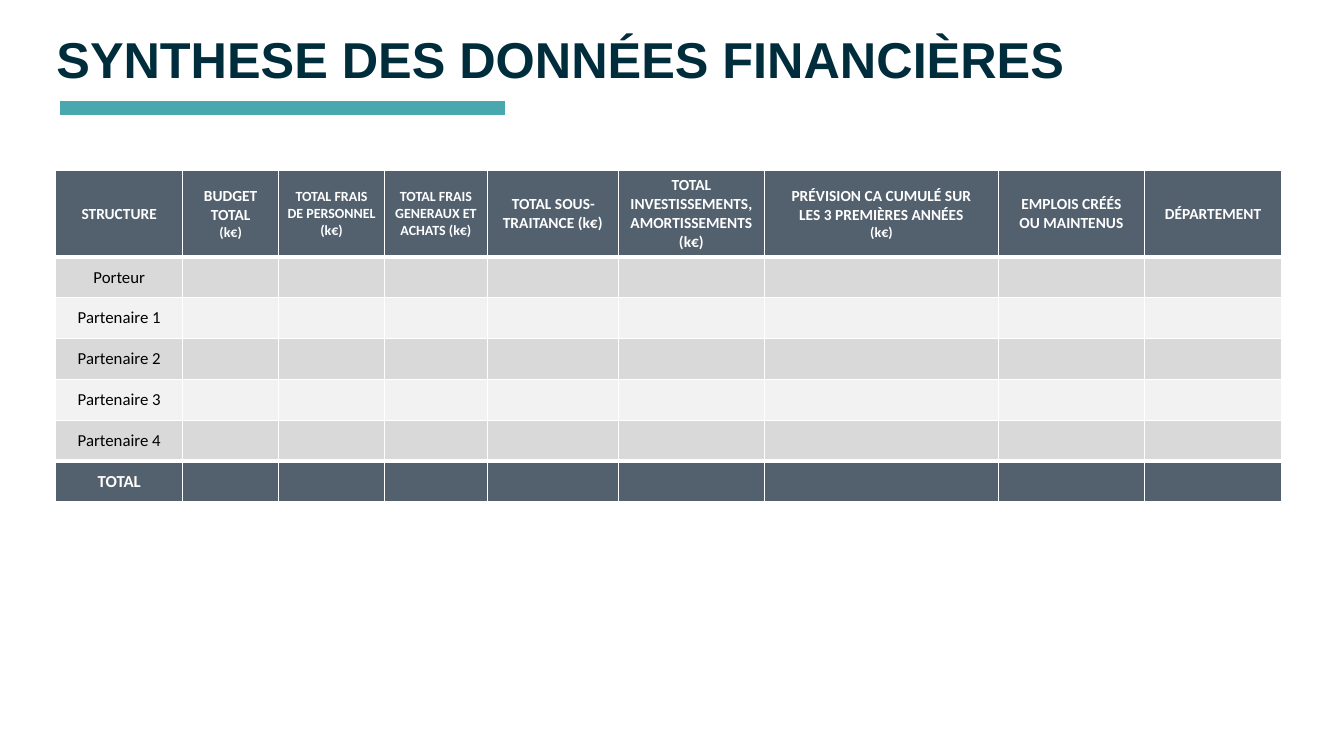
from lxml import etree
from pptx import Presentation
from pptx.dml.color import RGBColor
from pptx.enum.shapes import MSO_CONNECTOR
from pptx.enum.text import MSO_ANCHOR, MSO_AUTO_SIZE, PP_ALIGN
from pptx.oxml.ns import qn
from pptx.util import Inches, Pt

STRAIGHT = MSO_CONNECTOR.STRAIGHT
TOP, MIDDLE = MSO_ANCHOR.TOP, MSO_ANCHOR.MIDDLE
NO_FIT = MSO_AUTO_SIZE.NONE
LEFT, CENTER = PP_ALIGN.LEFT, PP_ALIGN.CENTER
WIDTH, HEIGHT = Inches(13.33), Inches(7.5)
COLORS = {
    "title": "002D3C", "accent": "49A8AE", "slate": "53606E", "white": "FFFFFF",
    "black": "000000", "dark band": "D9D9D9", "light band": "F2F2F2",
}
COLUMN_SHARES = [9.45, 7.13, 7.88, 7.65, 9.75, 10.88, 17.4, 10.88, 10.2]
HEADER_SHARE, ROW_SHARE = 11.2, 5.4
HEADERS = [
    [("STRUCTURE", 11)],
    [("BUDGET", 11), ("TOTAL", 11), ("(k€)", 10)],
    [("TOTAL FRAIS DE PERSONNEL (k€)", 10)],
    [("TOTAL FRAIS GENERAUX ET ACHATS (k€)", 10)],
    [("TOTAL SOUS-TRAITANCE (k€)", 11)],
    [("TOTAL INVESTISSEMENTS, AMORTISSEMENTS (k€)", 11)],
    [("PRÉVISION CA CUMULÉ SUR", 11), ("LES 3 PREMIÈRES ANNÉES", 11), ("(k€)", 10)],
    [("EMPLOIS CRÉÉS", 11), ("OU MAINTENUS", 11)],
    [("DÉPARTEMENT", 11)],
]
STRUCTURES = ["Porteur", *(f"Partenaire {number}" for number in range(1, 5)), "TOTAL"]


def across(share):
    """Return a percentage of the slide's width."""
    return round(WIDTH * share / 100)


def down(share):
    """Return a percentage of the slide's height."""
    return round(HEIGHT * share / 100)


def color(name):
    """Return a palette colour."""
    return RGBColor.from_string(COLORS[name])


def add_span(para, text, size, font, tint, bold):
    """Add one formatted run to a paragraph."""
    span = para.add_run()
    span.text = text
    span.font.size, span.font.name, span.font.bold = Pt(size), font, bold
    span.font.color.rgb = color(tint)


def add_title(page, text):
    """Place and format the title placeholder."""
    box = page.shapes.title
    box.left, box.top = across(3.45), down(4)
    box.width, box.height = across(84.7), down(7.2)
    frame = box.text_frame
    frame.word_wrap, frame.auto_size, frame.vertical_anchor = True, NO_FIT, TOP
    para = frame.paragraphs[0]
    para.alignment, para.line_spacing = LEFT, 0.9
    add_span(para, text, 36, "Arial", "title", True)


def add_rule(page):
    """Draw the accent line under the title."""
    rule = page.shapes.add_connector(
        STRAIGHT, across(4.45), down(14.3), across(37.6), down(14.3))
    rule.line.color.rgb, rule.line.width = color("accent"), Pt(10)
    etree.SubElement(rule._element.spPr, qn("a:effectLst"))


def set_borders(cell, top, bottom):
    """Give a cell white borders with the given top and bottom widths."""
    properties = cell._tc.get_or_add_tcPr()
    widths = {"a:lnL": 1, "a:lnR": 1, "a:lnT": top, "a:lnB": bottom}
    for position, (tag, width) in enumerate(widths.items()):
        line = etree.Element(qn(tag), w=str(Pt(width)))
        fill = etree.SubElement(line, qn("a:solidFill"))
        etree.SubElement(fill, qn("a:srgbClr"), val=COLORS["white"])
        properties.insert(position, line)


def fill_cell(cell, lines, fill, tint, bold):
    """Fill a cell and write its centred lines."""
    cell.fill.solid()
    cell.fill.fore_color.rgb = color(fill)
    cell.vertical_anchor = MIDDLE
    cell.margin_left = cell.margin_right = across(0.6)
    frame = cell.text_frame
    for index, (text, size) in enumerate(lines):
        para = frame.add_paragraph() if index else frame.paragraphs[0]
        para.alignment = CENTER
        add_span(para, text, size, "Calibri", tint, bold)
    if not lines:
        frame.paragraphs[0].font.size = Pt(12)


def add_finance_table(page):
    """Build the table of structures and financial totals."""
    rows = [HEADERS] + [
        [[(name, 12)]] + [[]] * (len(HEADERS) - 1) for name in STRUCTURES]
    last = len(rows) - 1
    table = page.shapes.add_table(
        len(rows), len(HEADERS), across(4.15), down(22.6),
        across(sum(COLUMN_SHARES)), down(HEADER_SHARE + last * ROW_SHARE)).table
    for column, share in zip(table.columns, COLUMN_SHARES):
        column.width = across(share)
    for index, row in enumerate(rows):
        table.rows[index].height = down(ROW_SHARE if index else HEADER_SHARE)
        strong = index in (0, last)
        band = "dark band" if index % 2 else "light band"
        for position, lines in enumerate(row):
            cell = table.cell(index, position)
            fill_cell(cell, lines, "slate" if strong else band,
                      "white" if strong else "black", strong)
            set_borders(cell, 3 if index in (1, last) else 1,
                        3 if index in (0, last - 1) else 1)


def main():
    """Create the deck and save it."""
    deck = Presentation()
    deck.slide_width, deck.slide_height = WIDTH, HEIGHT
    page = deck.slides.add_slide(deck.slide_layouts[5])
    add_rule(page)
    add_title(page, "SYNTHESE DES DONNÉES FINANCIÈRES")
    add_finance_table(page)
    deck.save("out.pptx")


if __name__ == "__main__":
    main()
